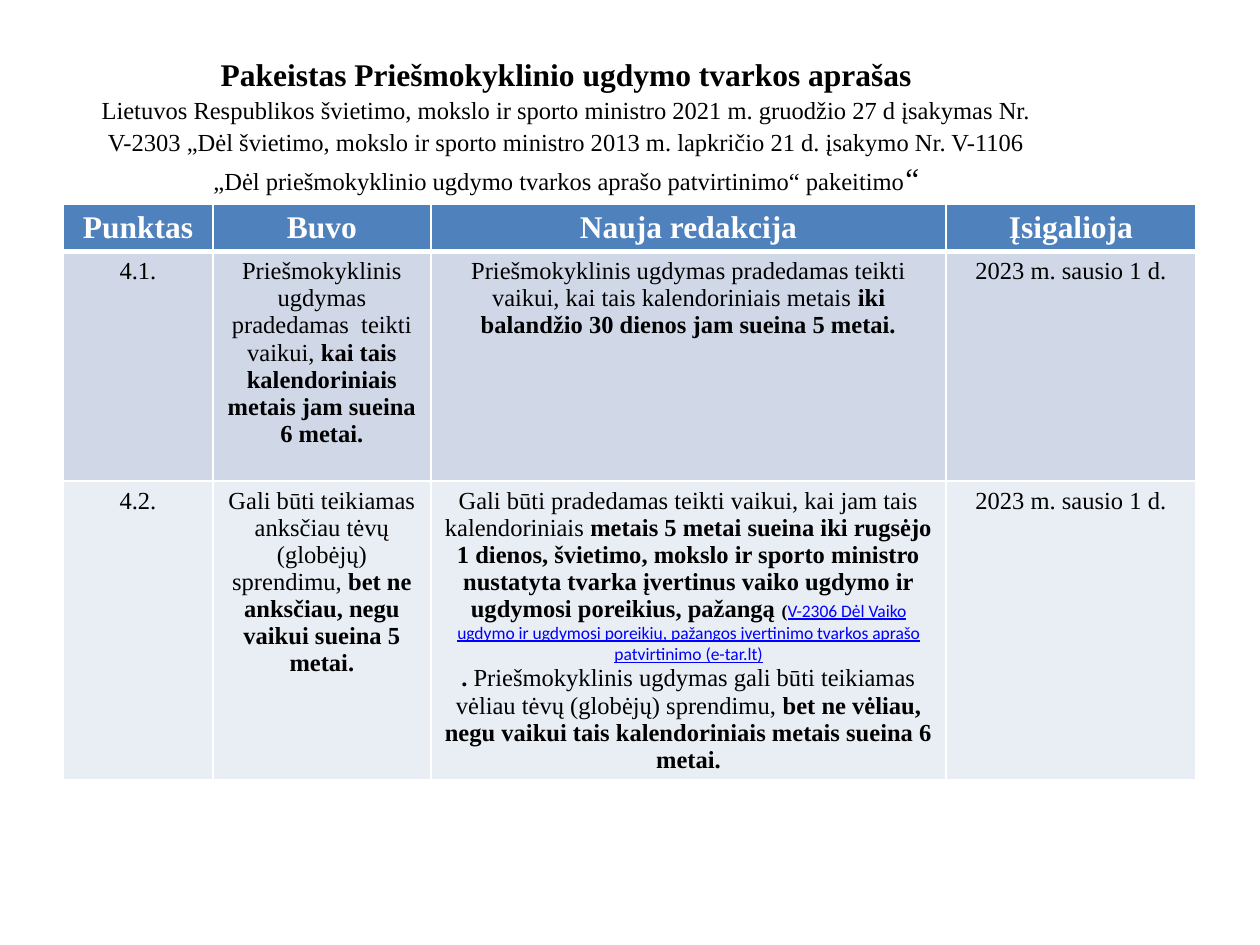
import pptx
import pptx.dml.color
import pptx.enum.text
import pptx.oxml
import pptx.oxml.ns
import pptx.util
from pptx.util import Inches

SERIF = "Times New Roman"
BLACK, WHITE, LINK = "000000", "FFFFFF", "0000FF"
HEADER_FILL, ROW_FILLS = "4F81BD", ("D0D8E8", "E9EDF4")
COLUMN_WIDTHS = (1.19, 1.73, 4.09, 1.98)
ROW_HEIGHTS = (0.37, 1.82, 2.37)

HEADERS = ("Punktas", "Buvo", "Nauja redakcija", "Įsigalioja")
BOLD = {"bold": True}
START_DATE = [[("2023 m. sausio 1 d.", {})]]

# Each cell is a list of paragraphs, each paragraph a list of (text, format).
ROWS = [
    [
        [[("4.1.", {})]],
        [[("Priešmokyklinis ugdymas pradedamas  teikti vaikui, ", {}),
          ("kai tais kalendoriniais metais jam sueina 6 metai.", BOLD)]],
        [[("Priešmokyklinis ugdymas pradedamas teikti vaikui, kai tais "
           "kalendoriniais metais ", {}),
          ("iki balandžio 30 dienos jam sueina 5 metai.", BOLD)]],
        START_DATE,
    ],
    [
        [[("4.2.", {})]],
        [[("Gali būti teikiamas anksčiau tėvų (globėjų) sprendimu, ", {}),
          ("bet ne anksčiau, negu vaikui sueina 5 metai.", BOLD)]],
        [[("Gali būti pradedamas teikti vaikui, kai jam tais kalendoriniais ", {}),
          ("metais 5 metai sueina iki rugsėjo 1 dienos, švietimo, mokslo ir "
           "sporto ministro nustatyta tvarka įvertinus vaiko ugdymo ir ugdymosi "
           "poreikius, pažangą ", BOLD),
          ("(", {"size": 10, "bold": True}),
          ("V-2306 Dėl Vaiko ugdymo ir ugdymosi poreikių, pažangos įvertinimo "
           "tvarkos aprašo patvirtinimo (e-tar.lt)",
           {"size": 10, "font": "Calibri", "color": LINK, "underline": True})],
         [(".", BOLD),
          (" Priešmokyklinis ugdymas gali būti teikiamas vėliau tėvų (globėjų) "
           "sprendimu, ", {}),
          ("bet ne vėliau, negu vaikui tais kalendoriniais metais sueina 6 metai.",
           BOLD)]],
        START_DATE,
    ],
]


def rgb(color):
    return pptx.dml.color.RGBColor.from_string(color)


def add_text(p, text, size=14, font=SERIF, color=BLACK, bold=False, underline=False):
    p.alignment = pptx.enum.text.PP_ALIGN.CENTER
    r = p.add_run()
    r.text = text
    r.font.size = pptx.util.Pt(size)
    r.font.name = font
    r.font.color.rgb = rgb(color)
    r.font.bold = bold
    r.font.underline = underline


def set_borders(cell, bottom=1):
    """Draw white cell borders; the bottom width in points may differ."""
    tc_pr = cell._tc.get_or_add_tcPr()
    sides = (("lnL", 1), ("lnR", 1), ("lnT", 1), ("lnB", bottom))
    for i, (side, width) in enumerate(sides):
        tc_pr.insert(i, pptx.oxml.parse_xml(
            f'<a:{side} {pptx.oxml.ns.nsdecls("a")} w="{pptx.util.Pt(width)}">'
            f'<a:solidFill><a:srgbClr val="{WHITE}"/></a:solidFill></a:{side}>'))


def fill_cell(cell, paragraphs, fill, bottom=1):
    cell.fill.solid()
    cell.fill.fore_color.rgb = rgb(fill)
    set_borders(cell, bottom)
    tf = cell.text_frame
    for i, runs in enumerate(paragraphs):
        p = tf.add_paragraph() if i else tf.paragraphs[0]
        for text, style in runs:
            add_text(p, text, **style)


def add_title(slide):
    sp = slide.shapes.title
    sp.left, sp.top = Inches(0.59), Inches(0.36)
    sp.width, sp.height = Inches(7.81), Inches(1.57)
    tf = sp.text_frame
    tf.word_wrap = True
    tf.auto_size = pptx.enum.text.MSO_AUTO_SIZE.NONE
    tf.vertical_anchor = pptx.enum.text.MSO_ANCHOR.MIDDLE
    tf.margin_bottom = Inches(0.36)
    p = tf.paragraphs[0]
    p.line_spacing = 1.07
    p.space_after = pptx.util.Pt(8)
    add_text(p, "Pakeistas Priešmokyklinio ugdymo tvarkos aprašas", size=18, bold=True)
    p.add_line_break()
    add_text(p, "Lietuvos Respublikos švietimo, mokslo ir sporto ministro 2021 m. "
                "gruodžio 27 d įsakymas Nr. V-2303 „Dėl švietimo, mokslo ir sporto "
                "ministro 2013 m. lapkričio 21 d. įsakymo Nr. V-1106 „Dėl "
                "priešmokyklinio ugdymo tvarkos aprašo patvirtinimo“ pakeitimo")
    add_text(p, "“", size=18)


def add_changes_table(slide):
    table = slide.shapes.add_table(
        len(ROW_HEIGHTS), len(COLUMN_WIDTHS), Inches(0.5), Inches(1.62),
        Inches(sum(COLUMN_WIDTHS)), Inches(sum(ROW_HEIGHTS))).table
    for column, width in zip(table.columns, COLUMN_WIDTHS):
        column.width = Inches(width)
    for row, height in zip(table.rows, ROW_HEIGHTS):
        row.height = Inches(height)
    header_style = {"size": 18, "color": WHITE, "bold": True}
    for cell, text in zip(table.rows[0].cells, HEADERS):
        fill_cell(cell, [[(text, header_style)]], HEADER_FILL, bottom=3)
    for i, (contents, fill) in enumerate(zip(ROWS, ROW_FILLS), start=1):
        for cell, paragraphs in zip(table.rows[i].cells, contents):
            fill_cell(cell, paragraphs, fill)


def main():
    prs = pptx.Presentation()
    prs.slide_width, prs.slide_height = Inches(10), Inches(7.5)
    slide = prs.slides.add_slide(prs.slide_layouts[5])
    add_title(slide)
    add_changes_table(slide)
    prs.save("out.pptx")


if __name__ == "__main__":
    main()
